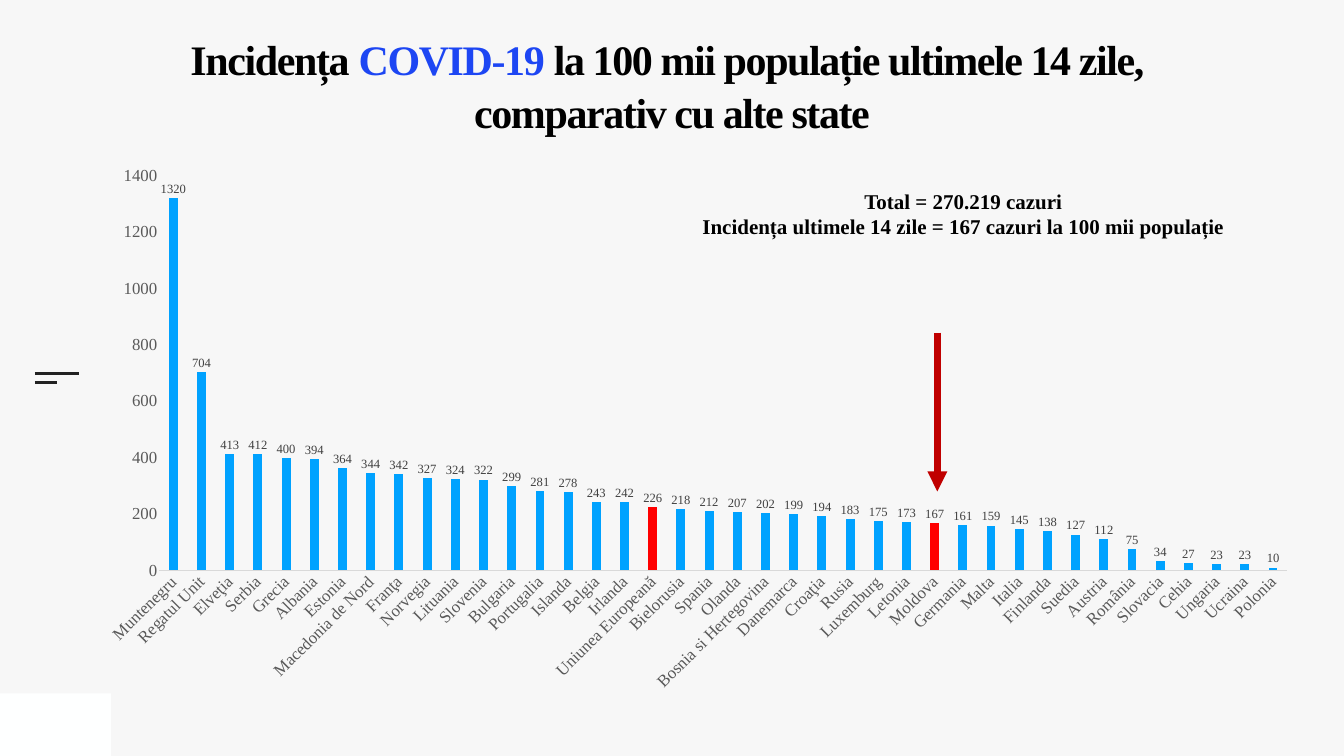
import pptx
import pptx.chart.data
import pptx.dml.color
import pptx.enum.chart
import pptx.enum.shapes
import pptx.enum.text
import pptx.oxml
import pptx.oxml.ns
import pptx.util
from dataclasses import dataclass
from lxml import etree

Inches = pptx.util.Inches
Pt = pptx.util.Pt
qn = pptx.oxml.ns.qn


@dataclass(frozen=True)
class Theme:
    font: str = "Times New Roman"
    background: str = "F7F7F7"
    panel: str = "FEFFFF"
    dash: str = "222222"
    text: str = "000000"
    accent: str = "1D46F3"
    bar: str = "00A2FF"
    highlight: str = "FF0000"
    arrow: str = "C00000"
    axis_text: str = "595959"
    axis_line: str = "D9D9D9"
    label_text: str = "404040"
    title_size: int = 60
    note_size: int = 30
    axis_size: int = 24
    label_size: int = 18


theme = Theme()


def set_font(font, size, color, bold=False):
    font.name = theme.font
    font.size = Pt(size)
    font.bold = bold
    font.color.rgb = pptx.dml.color.RGBColor.from_string(color)


def add_line(start, end, color, width):
    line = page.shapes.add_connector(
        pptx.enum.shapes.MSO_CONNECTOR.STRAIGHT,
        Inches(start[0]), Inches(start[1]), Inches(end[0]), Inches(end[1]))
    line.line.color.rgb = pptx.dml.color.RGBColor.from_string(color)
    line.line.width = Pt(width)
    etree.SubElement(line._element.spPr, qn("a:effectLst"))
    return line


deck = pptx.Presentation()
deck.slide_width = Inches(26.67)
deck.slide_height = Inches(15)
page = deck.slides.add_slide(deck.slide_layouts[6])
page.background.fill.solid()
page.background.fill.fore_color.rgb = pptx.dml.color.RGBColor.from_string(theme.background)

# Corner panel and side dashes
panel = page.shapes.add_shape(
    pptx.enum.shapes.MSO_SHAPE.RECTANGLE, 0, Inches(13.76), Inches(2.2), Inches(1.24))
panel.shadow.inherit = False
panel.fill.solid()
panel.fill.fore_color.rgb = pptx.dml.color.RGBColor.from_string(theme.panel)
panel.line.fill.background()
for right, y in ((1.57, 7.41), (1.13, 7.59)):
    add_line((0.69, y), (right, y), theme.dash, 3)

# Incidence chart
incidence = {
    "Muntenegru": 1320, "Regatul Unit": 704, "Elveţia": 413, "Serbia": 412,
    "Grecia": 400, "Albania": 394, "Estonia": 364, "Macedonia de Nord": 344,
    "Franţa": 342, "Norvegia": 327, "Lituania": 324, "Slovenia": 322,
    "Bulgaria": 299, "Portugalia": 281, "Islanda": 278, "Belgia": 243,
    "Irlanda": 242, "Uniunea Europeană": 226, "Bielorusia": 218, "Spania": 212,
    "Olanda": 207, "Bosnia si Hertegovina": 202, "Danemarca": 199, "Croaţia": 194,
    "Rusia": 183, "Luxemburg": 175, "Letonia": 173, "Moldova": 167,
    "Germania": 161, "Malta": 159, "Italia": 145, "Finlanda": 138,
    "Suedia": 127, "Austria": 112, "România": 75, "Slovacia": 34,
    "Cehia": 27, "Ungaria": 23, "Ucraina": 23, "Polonia": 10,
}
chart_data = pptx.chart.data.CategoryChartData(number_format="0")
chart_data.categories = list(incidence)
chart_data.add_series("Series 1", list(incidence.values()))
chart = page.shapes.add_chart(
    pptx.enum.chart.XL_CHART_TYPE.COLUMN_CLUSTERED,
    Inches(1.7), Inches(3.05), Inches(24.33), Inches(10.88), chart_data).chart
chart.has_title = False
chart.has_legend = False
set_font(chart.font, theme.axis_size, theme.text)

plot = chart.plots[0]
plot.vary_by_categories = False
plot.gap_width = 219
plot.overlap = -27
plot.has_data_labels = True
labels = plot.data_labels
labels.show_value = True
labels.number_format = "0"
labels.number_format_is_linked = False
labels.position = pptx.enum.chart.XL_LABEL_POSITION.OUTSIDE_END
set_font(labels.font, theme.label_size, theme.label_text)

series = plot.series[0]
series.invert_if_negative = False
series.format.fill.solid()
series.format.fill.fore_color.rgb = pptx.dml.color.RGBColor.from_string(theme.bar)
for name in ("Uniunea Europeană", "Moldova"):
    fill = series.points[list(incidence).index(name)].format.fill
    fill.solid()
    fill.fore_color.rgb = pptx.dml.color.RGBColor.from_string(theme.highlight)

for axis in (chart.category_axis, chart.value_axis):
    axis.has_major_gridlines = False
    axis.major_tick_mark = pptx.enum.chart.XL_TICK_MARK.NONE
    axis.minor_tick_mark = pptx.enum.chart.XL_TICK_MARK.NONE
    set_font(axis.tick_labels.font, theme.axis_size, theme.axis_text)
countries = chart.category_axis
countries.format.line.color.rgb = pptx.dml.color.RGBColor.from_string(theme.axis_line)
countries.format.line.width = Pt(0.75)
countries._element.find(qn("c:txPr")).find(qn("a:bodyPr")).set("rot", "-2700000")
values = chart.value_axis
values.format.line.fill.background()
values.minimum_scale = 0
values.maximum_scale = 1400
values.major_unit = 200
values.tick_labels.number_format = "0"
values.tick_labels.number_format_is_linked = False

# Fixed inner plot area, as fractions of the chart
plot_area = chart._chartSpace.chart.plotArea
for old_layout in plot_area.findall(qn("c:layout")):
    plot_area.remove(old_layout)
layout = etree.Element(qn("c:layout"))
plot_area.insert(0, layout)
manual = etree.SubElement(layout, qn("c:manualLayout"))
for tag, value in (("layoutTarget", "inner"), ("xMode", "edge"), ("yMode", "edge"),
                   ("x", "0.06"), ("y", "0.04"), ("w", "0.92"), ("h", "0.72")):
    etree.SubElement(manual, qn(f"c:{tag}")).set("val", value)

# Arrow pointing at Moldova
arrow = add_line((18.6, 6.6), (18.6, 9.75), theme.arrow, 9.5)
etree.SubElement(arrow.line._get_or_add_ln(), qn("a:tailEnd")).set("type", "triangle")

# Title
box = page.shapes.add_textbox(0, Inches(0.61), Inches(26.67), Inches(1.58))
frame = box.text_frame
frame.word_wrap = True
frame.margin_left = frame.margin_right = frame.margin_top = frame.margin_bottom = 0
para = frame.paragraphs[0]
para.alignment = pptx.enum.text.PP_ALIGN.CENTER
para.line_spacing = 1.05
for index, (text, color) in enumerate((
        ("Incidența ", theme.text), ("COVID-19", theme.accent),
        (" la 100 mii populație ultimele 14 zile, ", theme.text),
        ("comparativ cu alte state", theme.text))):
    if index == 3:
        para.add_line_break()
    span = para.add_run()
    span.text = text
    set_font(span.font, theme.title_size, color, bold=True)
    span.font._element.set("spc", "-200")

# Summary note
box = page.shapes.add_textbox(Inches(13.33), Inches(3.68), Inches(11.57), Inches(1.12))
frame = box.text_frame
frame.word_wrap = True
frame.vertical_anchor = pptx.enum.text.MSO_ANCHOR.MIDDLE
frame.margin_left = frame.margin_right = frame.margin_top = frame.margin_bottom = Inches(0.06)
frame.text = ("Total = 270.219 cazuri\n"
              "Incidența ultimele 14 zile = 167 cazuri la 100 mii populație")
for para in frame.paragraphs:
    para.alignment = pptx.enum.text.PP_ALIGN.CENTER
    set_font(para.font, theme.note_size, theme.text, bold=True)

deck.save("out.pptx")
